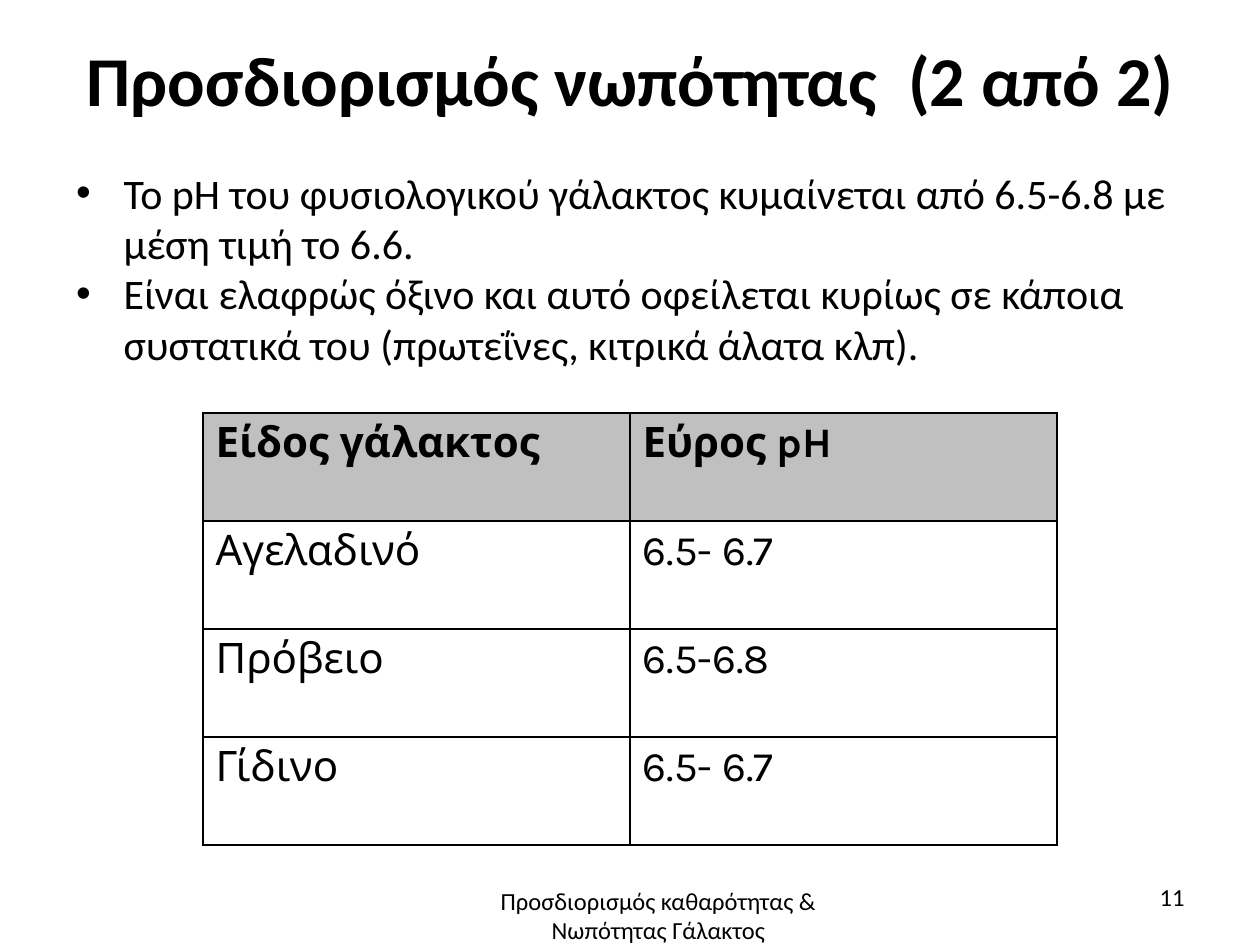
"""Build a slide on milk freshness with a table of pH ranges."""
from dataclasses import dataclass

from lxml.etree import SubElement
from pptx import Presentation
from pptx.dml.color import RGBColor
from pptx.enum.text import MSO_ANCHOR, PP_ALIGN
from pptx.oxml.ns import qn
from pptx.util import Pt

COLORS = {"text": "000000", "border": "000000", "header": "C0C0C0"}
INDENT = 27


@dataclass
class TextBlock:
    """Text with its place and format."""
    box: tuple[float, float, float, float]
    lines: tuple[str, ...]
    font: dict
    para: dict
    frame: dict
    bullet: bool = False


BLOCKS = (
    TextBlock((36.5, 3.5, 647.5, 90.5), ("Προσδιορισμός νωπότητας  (2 από 2)",),
              {"size": Pt(40), "bold": True},
              {"alignment": PP_ALIGN.CENTER, "line_spacing": 0.8},
              {"vertical_anchor": MSO_ANCHOR.MIDDLE, "margin_left": 0,
               "margin_right": 0, "margin_top": Pt(1.5), "margin_bottom": 0}),
    TextBlock((36.5, 92, 647.5, 124),
              ("Το pH του φυσιολογικού γάλακτος κυμαίνεται από 6.5-6.8 με μέση τιμή το 6.6.",
               "Είναι ελαφρώς όξινο και αυτό οφείλεται κυρίως σε κάποια συστατικά του "
               "(πρωτεΐνες, κιτρικά άλατα κλπ)."),
              {"size": Pt(24)}, {"alignment": PP_ALIGN.LEFT}, {}, True),
    TextBlock((250.5, 502.5, 251.5, 39.5),
              ("Προσδιορισμός καθαρότητας & Νωπότητας Γάλακτος",),
              {"size": Pt(14)}, {"alignment": PP_ALIGN.CENTER}, {}),
    TextBlock((516, 500.5, 168, 29), ("11",),
              {"size": Pt(14)}, {"alignment": PP_ALIGN.RIGHT}, {}),
)

ROWS = (
    ("Είδος γάλακτος", "Εύρος pH"),
    ("Αγελαδινό", "6.5- 6.7"),
    ("Πρόβειο", "6.5-6.8"),
    ("Γίδινο", "6.5- 6.7"),
)


def apply(obj, values: dict) -> None:
    """Set each named attribute on an object."""
    for name, value in values.items():
        setattr(obj, name, value)


def add_run(p, text: str, font: dict) -> None:
    """Add a formatted run to a paragraph."""
    r = p.add_run()
    r.text = text
    apply(r.font, {"name": "Calibri", **font})
    r.font.color.rgb = RGBColor.from_string(COLORS["text"])


def set_hanging(p, bullet: bool) -> None:
    """Give a paragraph a hanging indent and an optional bullet."""
    pPr = p._p.get_or_add_pPr()
    pPr.set("marL", str(Pt(INDENT)))
    pPr.set("indent", str(-Pt(INDENT)))
    if bullet:
        SubElement(pPr, qn("a:buFont"), typeface="Arial")
        SubElement(pPr, qn("a:buChar"), char="•")


def add_block(s, block: TextBlock) -> None:
    """Draw a text block."""
    sp = s.shapes.add_textbox(*map(Pt, block.box))
    tf = sp.text_frame
    apply(tf, {"word_wrap": True, **block.frame})
    for i, line in enumerate(block.lines):
        p = tf.add_paragraph() if i else tf.paragraphs[0]
        if block.bullet:
            set_hanging(p, True)
        apply(p, block.para)
        add_run(p, line, block.font)


def set_borders(cell) -> None:
    """Draw a thin line on every side of a cell."""
    tcPr = cell._tc.get_or_add_tcPr()
    for side in ("lnL", "lnR", "lnT", "lnB"):
        ln = SubElement(tcPr, qn(f"a:{side}"), w=str(Pt(1)))
        fill = SubElement(ln, qn("a:solidFill"))
        SubElement(fill, qn("a:srgbClr"), val=COLORS["border"])


def add_ph_table(s, rows: tuple[tuple[str, ...], ...]) -> None:
    """Draw the table of pH ranges."""
    box = map(Pt, (116, 236, 488, 246.8))
    table = s.shapes.add_table(len(rows), len(rows[0]), *box).table
    apply(table, {"first_row": False, "horz_banding": False})
    for i, row in enumerate(rows):
        table.rows[i].height = Pt(61.7)
        for j, text in enumerate(row):
            cell = table.cell(i, j)
            set_borders(cell)
            if i == 0:
                cell.fill.solid()
                cell.fill.fore_color.rgb = RGBColor.from_string(COLORS["header"])
            else:
                cell.fill.background()
            p = cell.text_frame.paragraphs[0]
            set_hanging(p, False)
            p.alignment = PP_ALIGN.JUSTIFY
            add_run(p, text, {"name": "Karla", "size": Pt(24), "bold": i == 0})


def main() -> None:
    """Build and save the presentation."""
    prs = Presentation()
    apply(prs, {"slide_width": Pt(720), "slide_height": Pt(540)})
    s = prs.slides.add_slide(prs.slide_layouts[6])
    for block in BLOCKS:
        add_block(s, block)
    add_ph_table(s, ROWS)
    prs.save("out.pptx")


if __name__ == "__main__":
    main()
